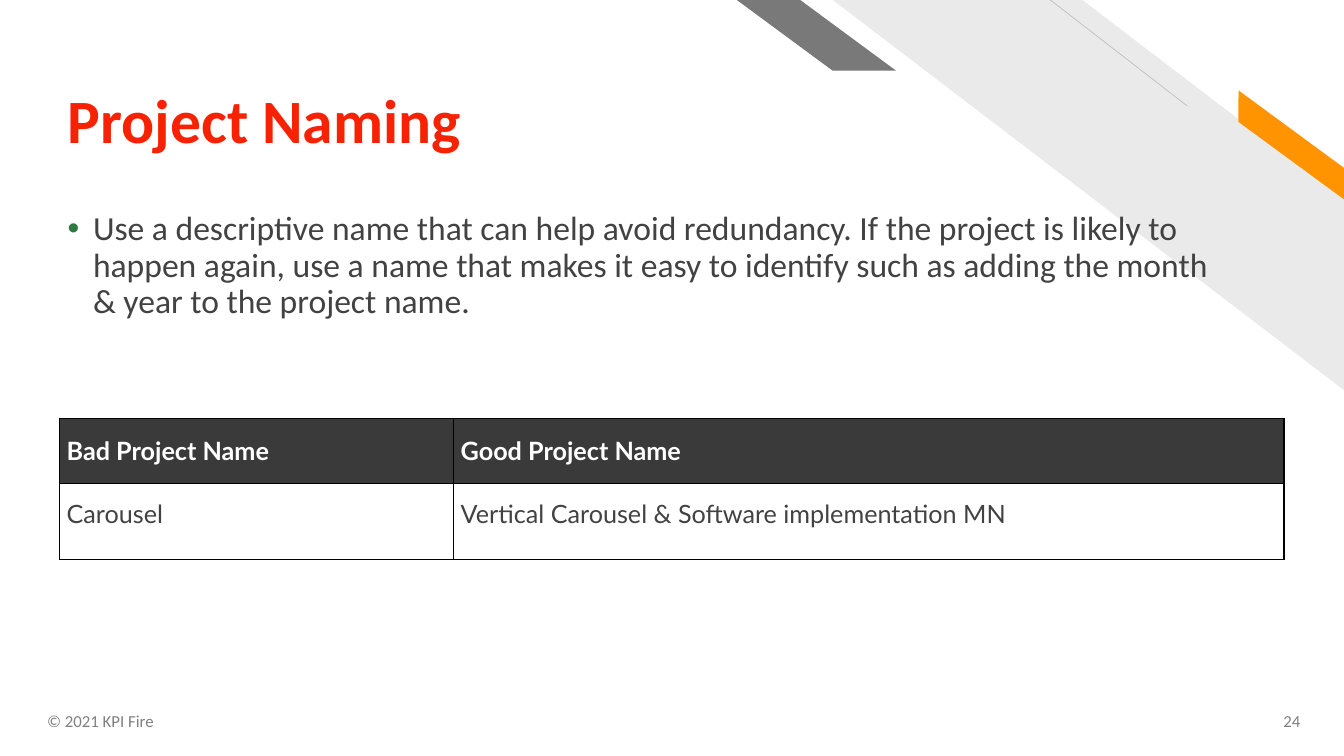
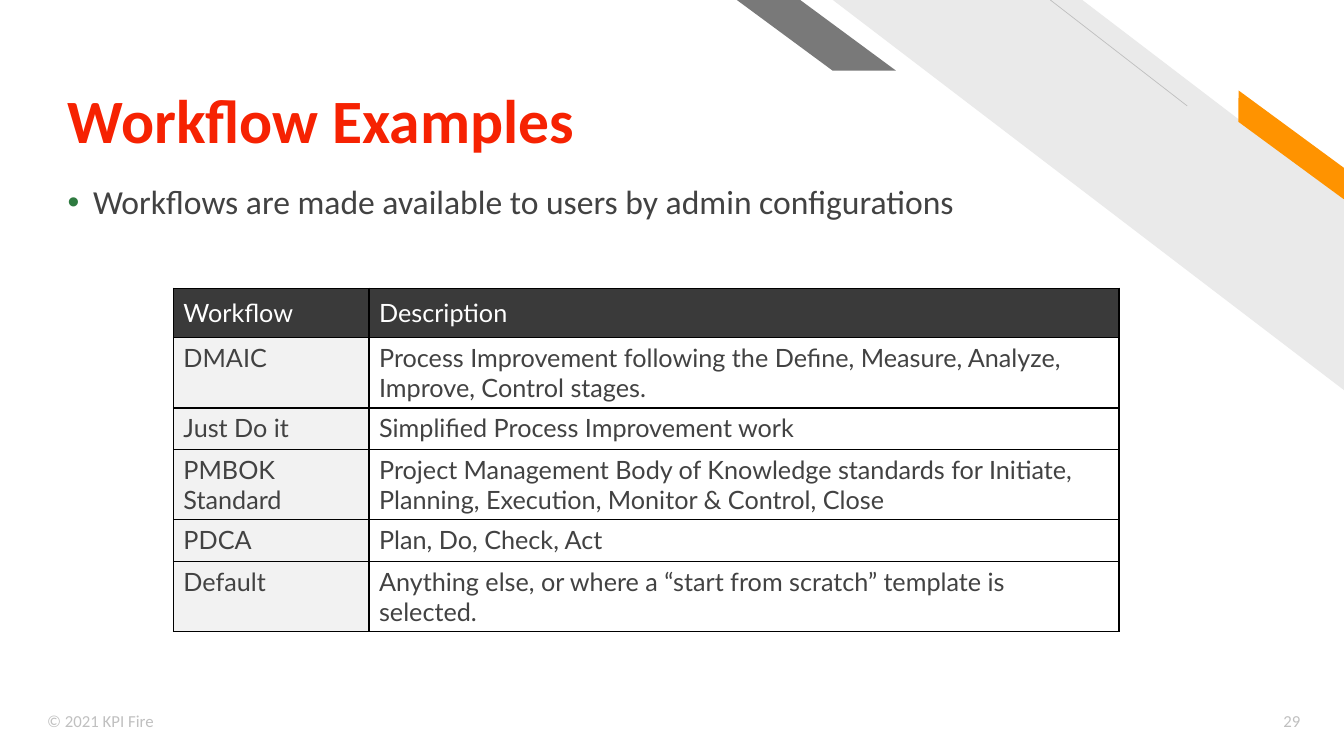
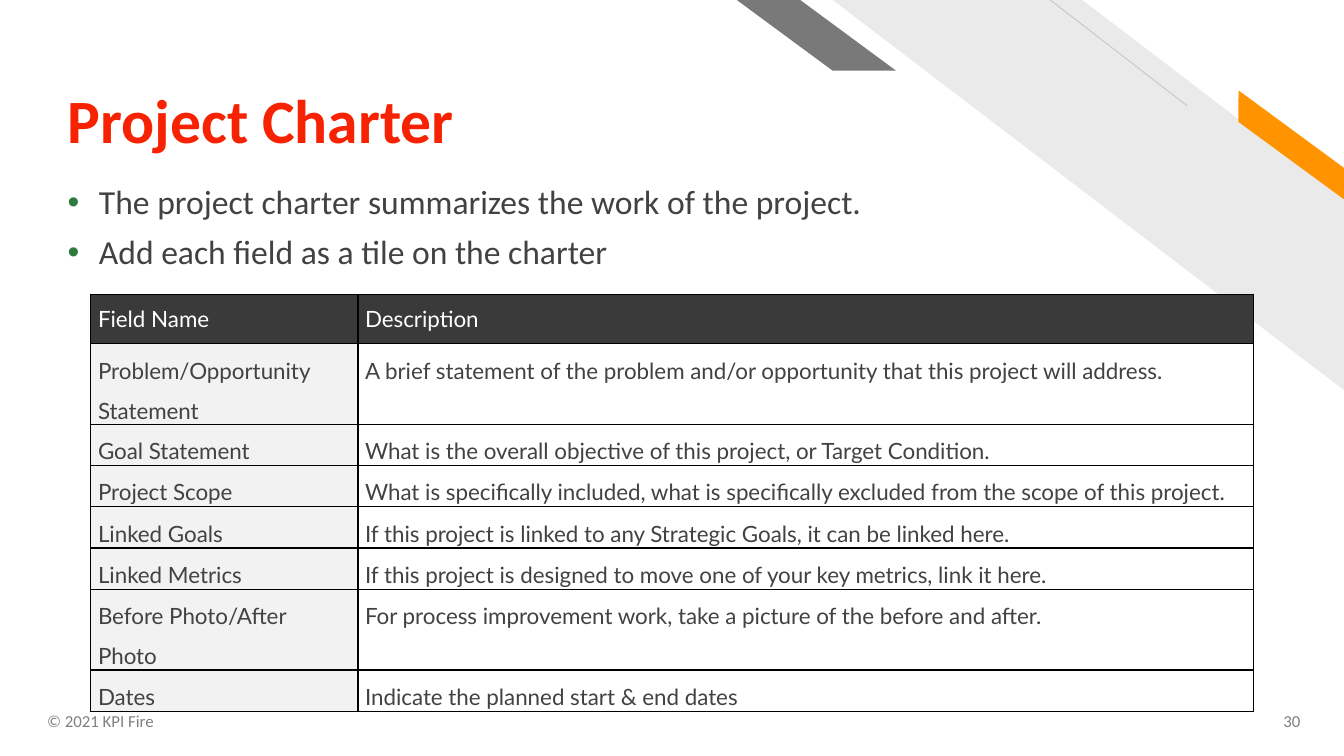
"""Builds three project guideline slides, each with a title, bullets and a table."""
from lxml.etree import SubElement
from pptx import Presentation
from pptx.dml.color import RGBColor
from pptx.enum.shapes import MSO_CONNECTOR as CONNECTOR, MSO_SHAPE as SHAPE
from pptx.enum.text import MSO_ANCHOR as ANCHOR, MSO_AUTO_SIZE as AUTO, PP_ALIGN as ALIGN
from pptx.oxml.ns import qn
from pptx.util import Cm, Pt

COLORS = {
    "title": "F62202", "text": "424242", "bullet": "2E7A40", "header": "3A3A3A",
    "label": "F2F2F2", "white": "FFFFFF", "border": "000000", "stripe": "EAEAEA",
    "orange": "FF9300", "gray": "797979", "hairline": "BFBFBF",
    "footer": "808080", "pale footer": "C0C0C0",
}
TITLE_FONT = {"name": "Calibri", "size": Pt(44), "bold": True}
BODY_FONT = {"name": "Calibri", "size": Pt(24), "bold": False}
FOOTER_FONT = {"name": "Calibri", "size": Pt(12), "bold": False}
TIGHT = {"margin_left": Cm(0.18), "margin_right": Cm(0.18), "margin_top": 0, "margin_bottom": 0}
TIGHT_HEADER = {"space_after": Pt(6)}
TIGHT_BODY = {"space_after": Pt(6), "line_spacing": 1.5}

SLIDES = [
    {
        "title": "Project Naming", "number": "24", "footer": "footer",
        "body": (1.45, 5.21, 29.51, 4.09), "indent": 0.64,
        "bullets": ["Use a descriptive name that can help avoid redundancy. If the project is likely to "
                    "happen again, use a name that makes it easy to identify such as adding the month "
                    "& year to the project name."],
        "at": (1.5, 10.54), "columns": [9.93, 20.93], "heights": [1.65, 1.9],
        "size": 18, "bold header": True, "labels": "white",
        "cell": TIGHT, "header": TIGHT_HEADER, "lines": TIGHT_BODY,
        "rows": [("Bad Project Name", "Good Project Name"),
                 ("Carousel", "Vertical Carousel & Software implementation MN")],
    },
    {
        "title": "Workflow Examples", "number": "29", "footer": "pale footer",
        "body": (1.45, 4.55, 29.67, 2.2), "indent": 0.64,
        "bullets": ["Workflows are made available to users by admin configurations"],
        "at": (4.37, 7.26), "columns": [4.93, 18.9],
        "heights": [1.24, 1.78, 1.04, 1.78, 1.04, 1.78],
        "size": 18, "bold header": False, "labels": "label",
        "cell": {}, "header": {}, "lines": {},
        "rows": [("Workflow", "Description"),
                 ("DMAIC", "Process Improvement following the Define, Measure, Analyze, "
                           "Improve, Control stages."),
                 ("Just Do it", "Simplified Process Improvement work"),
                 ("PMBOK Standard", "Project Management Body of Knowledge standards for Initiate, "
                                    "Planning, Execution, Monitor & Control, Close"),
                 ("PDCA", "Plan, Do, Check, Act"),
                 ("Default", "Anything else, or where a “start from scratch” template is selected.")],
    },
    {
        "title": "Project Charter", "number": "30", "footer": "footer",
        "body": (1.45, 4.55, 29.67, 2.44), "indent": 0.79,
        "bullets": ["The project charter summarizes the work of the project.",
                    "Add each field as a tile on the charter"],
        "at": (2.29, 7.42), "columns": [6.73, 22.56],
        "heights": [1.24, 2.03, 1.04, 1.04, 1.04, 1.04, 2.03, 1.04],
        "size": 16, "bold header": False, "labels": "label",
        "cell": TIGHT, "header": TIGHT_HEADER, "lines": TIGHT_BODY,
        "rows": [("Field Name", "Description"),
                 ("Problem/Opportunity Statement", "A brief statement of the problem and/or "
                                                   "opportunity that this project will address."),
                 ("Goal Statement", "What is the overall objective of this project, or Target Condition."),
                 ("Project Scope", "What is specifically included, what is specifically excluded "
                                   "from the scope of this project."),
                 ("Linked Goals", "If this project is linked to any Strategic Goals, it can be linked here."),
                 ("Linked Metrics", "If this project is designed to move one of your key metrics, "
                                    "link it here."),
                 ("Before Photo/After Photo", "For process improvement work, take a picture of the "
                                              "before and after."),
                 ("Dates", "Indicate the planned start & end dates")],
    },
]


def set_all(target, values):
    for name, value in values.items():
        setattr(target, name, value)


def write(para, text, font, color, layout):
    set_all(para, layout)
    span = para.add_run()
    span.text = text
    set_all(span.font, font)
    span.font.color.rgb = RGBColor.from_string(COLORS[color])


deck = Presentation()
deck.slide_width, deck.slide_height = Cm(33.87), Cm(19.05)
base = deck.slide_layouts[1]
pages = [deck.slides.add_slide(base) for _ in SLIDES]

decor = []
for kind, at, adjustment, rotation, color in [
    (SHAPE.DIAGONAL_STRIPE, (20.99, 0, 12.88, 9.83), 0.512, 0, "stripe"),
    (SHAPE.PARALLELOGRAM, (30.66, 3.33, 3.76, 0.64), 0.72, 36.3, "orange"),
    (SHAPE.PARALLELOGRAM, (18.57, 0, 4.01, 1.78), 1.356, 0, "gray"),
]:
    band = pages[0].shapes.add_shape(kind, *map(Cm, at))
    band.adjustments[0] = adjustment
    band.rotation = rotation
    band.shadow.inherit = False
    band.fill.solid()
    band.fill.fore_color.rgb = RGBColor.from_string(COLORS[color])
    band.line.fill.background()
    band.element.spPr.find(qn("a:xfrm")).set("flipH", "1")
    decor.append(band)
hairline = pages[0].shapes.add_connector(CONNECTOR.STRAIGHT, Cm(29.92), Cm(2.67), Cm(26.47), 0)
hairline.line.color.rgb = RGBColor.from_string(COLORS["hairline"])
hairline.line.width = Pt(0.5)
SubElement(hairline.element.spPr, qn("a:effectLst"))
for item in decor + [hairline]:
    base.shapes.element.append(item.element)

for page, content in zip(pages, SLIDES):
    title, body = page.placeholders
    for box, at in [(title, (1.45, 0.58, 23.14, 3.38)), (body, content["body"])]:
        set_all(box, dict(zip(("left", "top", "width", "height"), map(Cm, at))))
        box.text_frame.auto_size = AUTO.NONE
    set_all(title.text_frame, {"vertical_anchor": ANCHOR.BOTTOM, "margin_bottom": 0})
    write(title.text_frame.paragraphs[0], content["title"], TITLE_FONT, "title",
          {"alignment": ALIGN.LEFT, "line_spacing": 0.9})

    for index, text in enumerate(content["bullets"]):
        para = body.text_frame.add_paragraph() if index else body.text_frame.paragraphs[0]
        write(para, text, BODY_FONT, "text",
              {"line_spacing": 0.9, "space_before": Pt(10 if index else 0)})
        props = para._p.get_or_add_pPr()
        props.set("marL", str(Cm(content["indent"])))
        props.set("indent", str(-Cm(content["indent"])))
        SubElement(SubElement(props, qn("a:buClr")), qn("a:srgbClr"), val=COLORS["bullet"])
        SubElement(props, qn("a:buChar"), char="•")

    for text, left, width, alignment in [
        ("© 2021 KPI Fire", 0.94, 11.43, ALIGN.LEFT),
        (content["number"], 30.96, 2.06, ALIGN.RIGHT),
    ]:
        box = page.shapes.add_textbox(Cm(left), Cm(17.65), Cm(width), Cm(1.02))
        set_all(box.text_frame, {"word_wrap": True, "vertical_anchor": ANCHOR.MIDDLE})
        write(box.text_frame.paragraphs[0], text, FOOTER_FONT, content["footer"],
              {"alignment": alignment})

    rows, columns, heights = content["rows"], content["columns"], content["heights"]
    size = sum(columns), sum(heights)
    table = page.shapes.add_table(len(rows), len(columns), *map(Cm, content["at"] + size)).table
    table.horz_banding = False
    for column, width in zip(table.columns, columns):
        column.width = Cm(width)
    for row_index, (row, height, texts) in enumerate(zip(table.rows, heights, rows)):
        row.height = Cm(height)
        is_header = row_index == 0
        for column_index, (cell, text) in enumerate(zip(row.cells, texts)):
            set_all(cell, content["cell"])
            cell.vertical_anchor = ANCHOR.MIDDLE if is_header else ANCHOR.TOP
            for side in ("lnL", "lnR", "lnT", "lnB"):
                border = SubElement(cell._tc.get_or_add_tcPr(), qn(f"a:{side}"), w=str(Pt(1)))
                SubElement(SubElement(border, qn("a:solidFill")), qn("a:srgbClr"), val=COLORS["border"])
            fill = "header" if is_header else "white" if column_index else content["labels"]
            cell.fill.solid()
            cell.fill.fore_color.rgb = RGBColor.from_string(COLORS[fill])
            font = {"name": "Lato", "size": Pt(content["size"]),
                    "bold": is_header and content["bold header"]}
            write(cell.text_frame.paragraphs[0], text, font, "white" if is_header else "text",
                  content["header" if is_header else "lines"])

deck.save("out.pptx")
